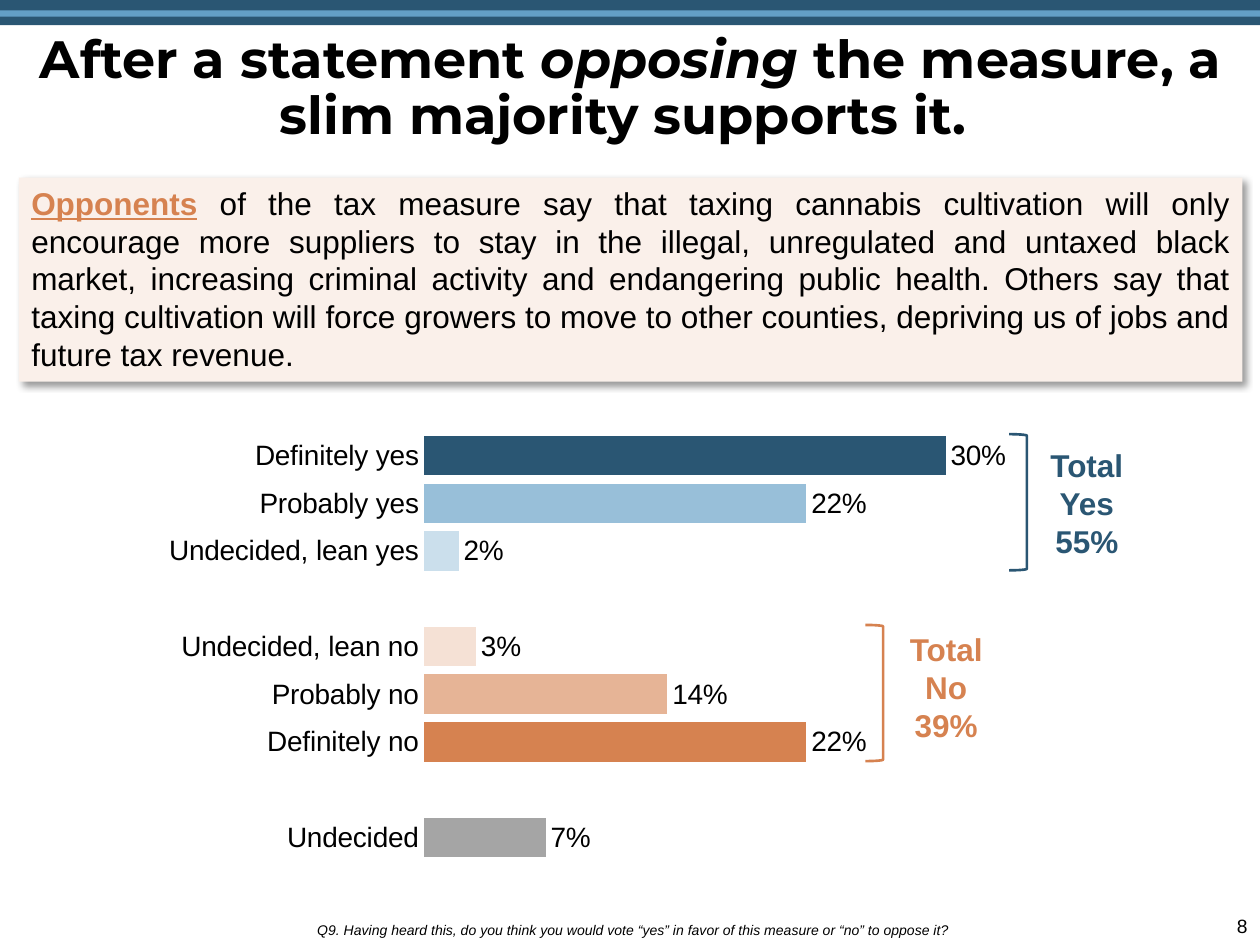
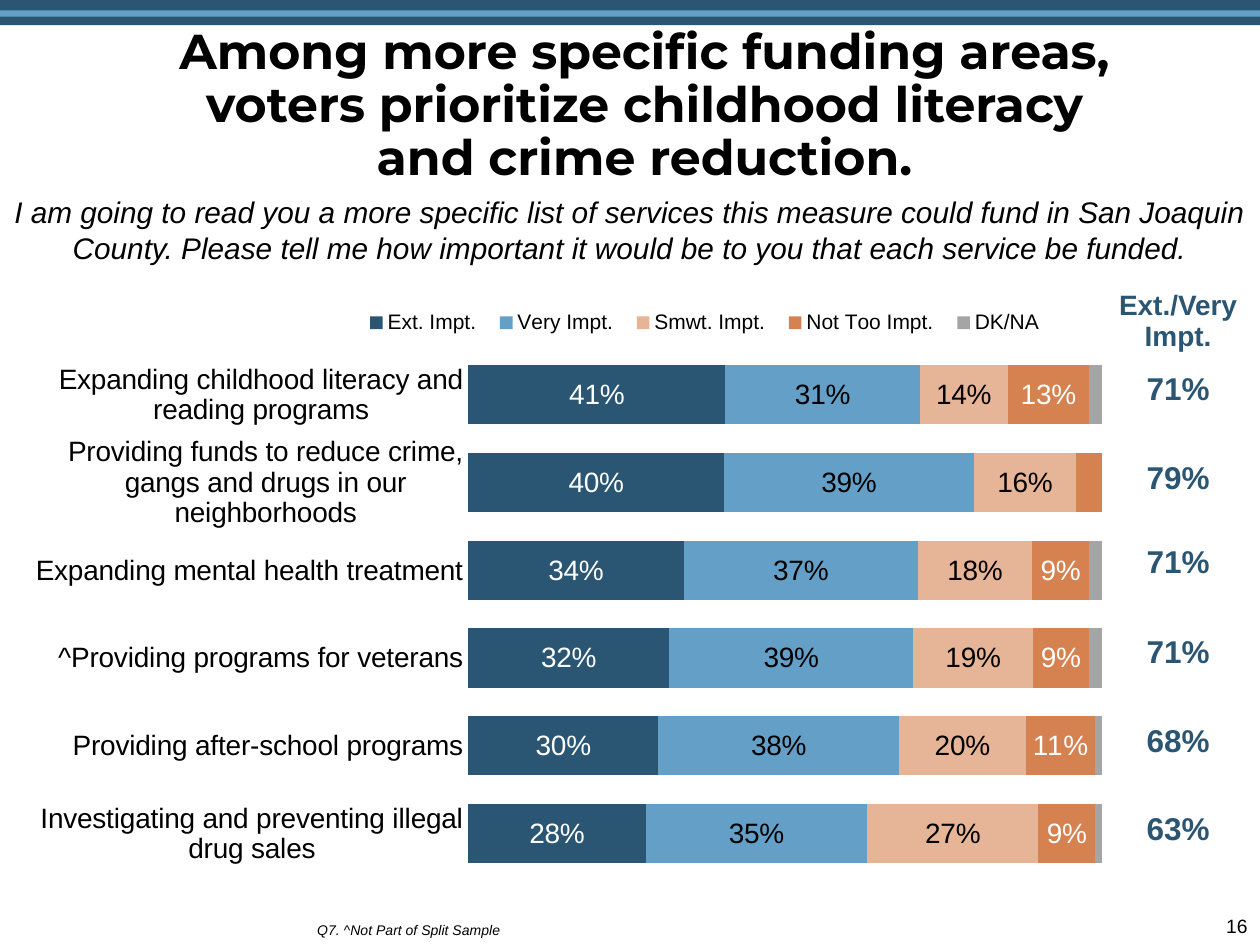
"""Build two survey slides: a vote after an opposing statement, and funding priorities."""
from dataclasses import dataclass
from typing import NamedTuple, Optional

from lxml.etree import SubElement
from pptx import Presentation
from pptx.chart.data import CategoryChartData
from pptx.dml.color import RGBColor
from pptx.enum.chart import (XL_CHART_TYPE as ChartType, XL_LABEL_POSITION as LabelPosition,
                             XL_LEGEND_POSITION as LegendPosition, XL_TICK_MARK as TickMark)
from pptx.enum.shapes import MSO_SHAPE as Preset
from pptx.enum.text import MSO_ANCHOR as Anchor, MSO_AUTO_SIZE as AutoSize, PP_ALIGN as Align
from pptx.oxml.ns import qn
from pptx.util import Pt


@dataclass(frozen=True)
class Theme:
    """Colours, fonts and type sizes of the deck."""
    navy: str = "2A5673"
    blue: str = "639FC6"
    light_blue: str = "98BFD9"
    pale_blue: str = "CBDFEC"
    orange: str = "D68250"
    light_orange: str = "E6B496"
    pale_orange: str = "F5E1D5"
    cream: str = "FAF0EA"
    gray: str = "A5A5A5"
    black: str = "000000"
    white: str = "FFFFFF"
    heading_font: str = "Montserrat"
    body_font: str = "Arial"
    body_size: int = 18
    prompt_size: int = 17
    label_size: int = 16
    legend_size: int = 12
    page_size: int = 11
    note_size: int = 8


THEME = Theme()
BREAK = "\n"


class Box(NamedTuple):
    """A place on the slide or a share of a chart."""
    left: float
    top: float
    width: float
    height: float

    def points(self) -> tuple:
        """Return the four lengths as points."""
        return tuple(Pt(length) for length in self)


class Run(NamedTuple):
    """A stretch of text in one format."""
    text: str
    size: float = THEME.body_size
    color: str = THEME.black
    bold: bool = False
    italic: bool = False
    underline: bool = False
    font: str = THEME.body_font


class Total(NamedTuple):
    """A bracket that sums answers, with its caption."""
    answer: str
    share: str
    color: str
    bracket: Box
    caption: Box


class Answer(NamedTuple):
    """One bar of the vote chart."""
    label: str = ""
    share: Optional[float] = None
    color: Optional[str] = None


class Rating(NamedTuple):
    """One series of the priorities chart."""
    name: str
    shares: tuple
    color: str
    label_color: Optional[str] = None
    unlabelled: tuple = ()


BANDS = ((Box(0, 0, 720, 14.4), THEME.navy), (Box(0, 5.9, 720, 3.6), THEME.blue))
PAGE_BOX = Box(613.4, 519.1, 106.6, 20.9)
NOTE_BOX = Box(174.2, 508.3, 524.9, 31.7)

TOTALS = (
    Total("Yes", "55%", THEME.navy, Box(576.7, 248.1, 10.1, 77.8), Box(581.8, 251.3, 78.5, 72.7)),
    Total("No", "39%", THEME.orange, Box(494.6, 357.1, 10.1, 77.8), Box(504.7, 356.4, 72, 72.7)),
)
ANSWERS = (
    Answer("Definitely yes", 0.30, THEME.navy),
    Answer("Probably yes", 0.22, THEME.light_blue),
    Answer("Undecided, lean yes", 0.02, THEME.pale_blue),
    Answer(),
    Answer("Undecided, lean no", 0.03, THEME.pale_orange),
    Answer("Probably no", 0.14, THEME.light_orange),
    Answer("Definitely no", 0.22, THEME.orange),
    Answer(),
    Answer("Undecided", 0.07, THEME.gray),
)
SERVICES = (
    "Expanding childhood literacy and reading programs",
    "Providing funds to reduce crime, gangs and drugs in our neighborhoods",
    "Expanding mental health treatment",
    "^Providing programs for veterans",
    "Providing after-school programs",
    "Investigating and preventing illegal drug sales",
)
RATINGS = (
    Rating("Ext. Impt.", (0.41, 0.40, 0.34, 0.32, 0.30, 0.28), THEME.navy, THEME.white),
    Rating("Very Impt.", (0.31, 0.39, 0.37, 0.39, 0.38, 0.35), THEME.blue, THEME.black),
    Rating("Smwt. Impt.", (0.14, 0.16, 0.18, 0.19, 0.20, 0.27), THEME.light_orange, THEME.black),
    Rating("Not Too Impt.", (0.13, 0.04, 0.09, 0.09, 0.11, 0.09), THEME.orange, THEME.white, (1,)),
    Rating("DK/NA", (0.02, 0, 0.02, 0.02, 0.01, 0.01), THEME.gray),
)
SUMMARY = ("Ext./Very Impt.", "71%", "79%", "71%", "71%", "68%", "63%")
SUMMARY_HEIGHTS = (36.7, 31, 51.1, 48.2, 51.1, 51.1, 50.4)


def rgb(color: str) -> RGBColor:
    """Turn a hex string into a colour."""
    return RGBColor.from_string(color)


def paint(target, color: str) -> None:
    """Give a shape, series or point a solid fill."""
    target.fill.solid()
    target.fill.fore_color.rgb = rgb(color)


def style_font(font, size: float, color: str, name: str = THEME.body_font) -> None:
    """Set size, colour and typeface."""
    font.size, font.name = Pt(size), name
    font.color.rgb = rgb(color)


def write(frame, runs, align=Align.LEFT, anchor=Anchor.TOP, spacing: float = 1.0) -> None:
    """Write one paragraph of runs into a text frame."""
    frame.word_wrap, frame.auto_size, frame.vertical_anchor = True, AutoSize.NONE, anchor
    paragraph = frame.paragraphs[0]
    paragraph.alignment, paragraph.line_spacing, paragraph.space_before = align, spacing, Pt(0)
    for part in runs:
        if part.text == BREAK:
            paragraph.add_line_break()
            continue
        run = paragraph.add_run()
        run.text = part.text
        style_font(run.font, part.size, part.color, part.font)
        run.font.bold, run.font.italic, run.font.underline = part.bold, part.italic, part.underline


def add_text(slide, box: Box, *runs: Run, **layout) -> None:
    """Add a text box."""
    write(slide.shapes.add_textbox(*box.points()).text_frame, runs, **layout)


def add_block(slide, box: Box, color: str):
    """Add a plain filled rectangle."""
    block = slide.shapes.add_shape(Preset.RECTANGLE, *box.points())
    block.shadow.inherit = False
    paint(block, color)
    block.line.fill.background()
    return block


def heading(text: str, size: float, italic: bool = False) -> Run:
    """Return a run in the title style."""
    return Run(text, size, bold=True, italic=italic, font=THEME.heading_font)


def start_slide(deck, page: int, title_box: Box, title_runs, note: str):
    """Add a slide with title, bands, page number and question note."""
    slide = deck.slides.add_slide(deck.slide_layouts[5])
    title = slide.shapes.title
    title.left, title.top, title.width, title.height = title_box.points()
    write(title.text_frame, title_runs, Align.CENTER, spacing=0.9)
    for box, color in BANDS:
        add_block(slide, box, color)
    add_text(slide, PAGE_BOX, Run(str(page), THEME.page_size), align=Align.RIGHT)
    add_text(slide, NOTE_BOX, Run(note, THEME.note_size, italic=True),
             anchor=Anchor.BOTTOM, spacing=0.9)
    return slide


def set_layout(parent, index: int, area: Box, inner: bool = False) -> None:
    """Fix a chart part at given shares of the chart."""
    for old in parent.findall(qn("c:layout")):
        parent.remove(old)
    layout = SubElement(parent, qn("c:layout"))
    parent.insert(index, layout)
    manual = SubElement(layout, qn("c:manualLayout"))
    settings = [("layoutTarget", "inner")] if inner else []
    settings += [("xMode", "edge"), ("yMode", "edge"), *zip("xywh", area)]
    for tag, value in settings:
        SubElement(manual, qn(f"c:{tag}")).set("val", str(value))


def add_bars(slide, kind, box: Box, area: Box, data, gap: int, maximum: float):
    """Add a horizontal bar chart without visible axes."""
    chart = slide.shapes.add_chart(kind, *box.points(), data).chart
    chart.has_title = chart.has_legend = False
    style_font(chart.font, THEME.label_size, THEME.black)
    plot = chart.plots[0]
    plot.gap_width, plot.vary_by_categories = gap, False
    answers, scale = chart.category_axis, chart.value_axis
    answers.reverse_order = True
    answers.major_tick_mark = answers.minor_tick_mark = TickMark.NONE
    answers.format.line.fill.background()
    style_font(answers.tick_labels.font, THEME.label_size, THEME.black)
    scale.visible = scale.has_major_gridlines = False
    scale.minimum_scale, scale.maximum_scale = 0, maximum
    set_layout(chart.element.find(f".//{qn('c:plotArea')}") if hasattr(chart, "element")
               else chart._chartSpace.find(f".//{qn('c:plotArea')}"), 0, area, True)
    return chart


def label_series(series, color: str, position):
    """Show the values of a series as percentages."""
    labels = series.data_labels
    labels.show_value, labels.position = True, position
    labels.number_format, labels.number_format_is_linked = "0%", False
    style_font(labels.font, THEME.label_size, color)
    return labels


def add_vote_slide(deck) -> None:
    """Build the slide on the vote after the opposing statement."""
    slide = start_slide(
        deck, 8, Box(10.8, 15.1, 699.1, 90),
        (heading("After a statement ", 30), heading("opposing", 30, True),
         heading(" the measure, a slim majority supports it. ", 30)),
        "Q9. Having heard this, do you think you would vote “yes” in favor of this measure "
        "or “no” to oppose it?")
    data = CategoryChartData("0%")
    data.categories = [answer.label for answer in ANSWERS]
    data.add_series("Series 1", [answer.share for answer in ANSWERS])
    chart = add_bars(slide, ChartType.BAR_CLUSTERED, Box(30.2, 236.9, 679.7, 279.4),
                     Box(0.312, 0.035, 0.658, 0.879), data, 21, 0.45)
    votes = chart.plots[0].series[0]
    paint(votes.format, THEME.navy)
    for index, answer in enumerate(ANSWERS):
        if answer.color:
            paint(votes.points[index].format, answer.color)
    label_series(votes, THEME.black, LabelPosition.OUTSIDE_END)

    for total in TOTALS:
        bracket = slide.shapes.add_shape(Preset.RIGHT_BRACKET, *total.bracket.points())
        bracket.shadow.inherit = False
        bracket.fill.background()
        bracket.line.color.rgb, bracket.line.width = rgb(total.color), Pt(1.5)
        add_text(slide, total.caption, Run(f"Total {total.answer}", color=total.color, bold=True),
                 Run(BREAK), Run(total.share, color=total.color, bold=True), align=Align.CENTER)

    statement = add_block(slide, Box(10.8, 101.5, 699.1, 116.6), THEME.cream)
    effects = statement.element.spPr.find(qn("a:effectLst"))
    shadow = SubElement(effects, qn("a:outerShdw"), blurRad=str(Pt(4)), dist=str(Pt(3)),
                        dir="2700000", algn="tl", rotWithShape="0")
    tint = SubElement(shadow, qn("a:srgbClr"), val=THEME.black)
    SubElement(tint, qn("a:alpha"), val="40000")
    write(statement.text_frame, (
        Run("Opponents", color=THEME.orange, bold=True, underline=True),
        Run(" of the tax measure say that taxing cannabis cultivation will only encourage more "
            "suppliers to stay in the illegal, unregulated and untaxed black market, increasing "
            "criminal activity and endangering public health. Others say that taxing cultivation "
            "will force growers to move to other counties, depriving us of jobs and future tax "
            "revenue.")), Align.JUSTIFY)


def add_priorities_slide(deck) -> None:
    """Build the slide on the importance of each service."""
    slide = start_slide(
        deck, 16, Box(88.6, 12.2, 559.4, 90),
        (heading("Among more specific funding areas, voters prioritize childhood literacy "
                 "and crime reduction.", 28),), "Q7. ^Not Part of Split Sample")
    data = CategoryChartData("0%")
    data.categories = SERVICES
    for rating in RATINGS:
        data.add_series(rating.name, rating.shares)
    chart = add_bars(slide, ChartType.BAR_STACKED_100, Box(10.8, 172.1, 637.2, 353.5),
                     Box(0.403, 0.08, 0.568, 0.852), data, 48, 1)
    chart.plots[0].overlap = 100
    chart.has_legend = True
    chart.legend.position, chart.legend.include_in_layout = LegendPosition.TOP, False
    style_font(chart.legend.font, THEME.legend_size, THEME.black)
    set_layout(chart.legend._element, 1, Box(0.3, 0.01, 0.63, 0.05))
    for rating, series in zip(RATINGS, chart.plots[0].series):
        paint(series.format, rating.color)
        if rating.label_color:
            labels = label_series(series, rating.label_color, LabelPosition.CENTER)
            for index in rating.unlabelled:
                hidden = SubElement(labels._element, qn("c:dLbl"))
                labels._element.insert(0, hidden)
                SubElement(hidden, qn("c:idx")).set("val", str(index))
                SubElement(hidden, qn("c:delete")).set("val", "1")

    summary = slide.shapes.add_table(len(SUMMARY), 1,
                                     *Box(632.9, 164.9, 80.6, sum(SUMMARY_HEIGHTS)).points()).table
    summary.first_row = summary.horz_banding = False
    for index, (text, height) in enumerate(zip(SUMMARY, SUMMARY_HEIGHTS)):
        summary.rows[index].height = Pt(height)
        cell = summary.cell(index, 0)
        cell.fill.background()
        cell.margin_left = cell.margin_right = cell.margin_top = Pt(0.7)
        cell.margin_bottom = Pt(0)
        size = THEME.body_size if index else THEME.label_size
        write(cell.text_frame, (Run(text, size, THEME.navy, bold=True),), Align.CENTER)
        cell.vertical_anchor = Anchor.BOTTOM

    add_text(slide, Box(-2.9, 107.3, 725.8, 48.2), Run(
        "I am going to read you a more specific list of services this measure could fund in "
        "San Joaquin County. Please tell me how important it would be to you that each service "
        "be funded.", THEME.prompt_size, italic=True), align=Align.CENTER, anchor=Anchor.MIDDLE)


def main() -> None:
    """Build and save the deck."""
    deck = Presentation()
    deck.slide_width, deck.slide_height = Pt(720), Pt(540)
    add_vote_slide(deck)
    add_priorities_slide(deck)
    deck.save("out.pptx")


if __name__ == "__main__":
    main()
